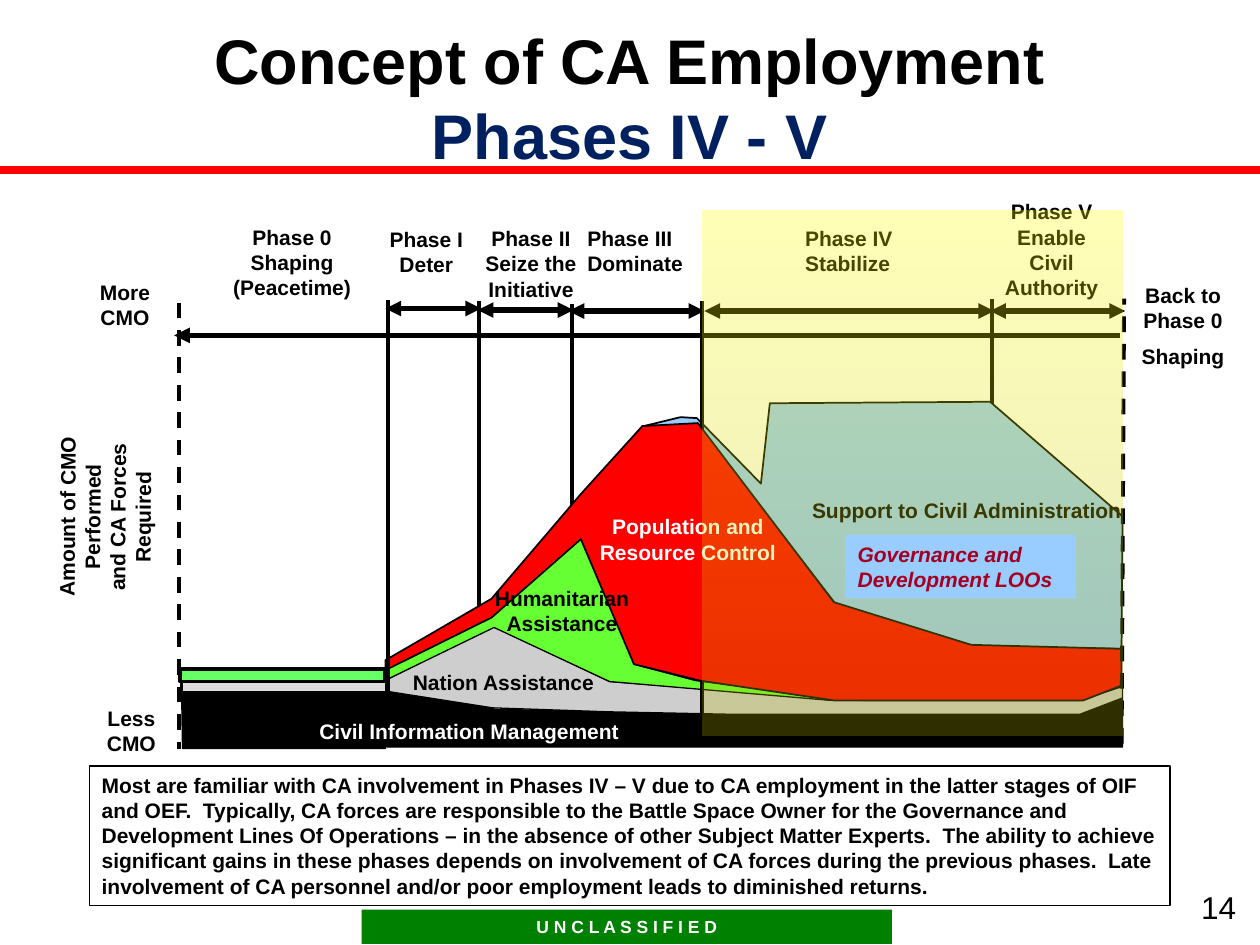
from lxml import etree
from pptx import Presentation
from pptx.dml.color import RGBColor
from pptx.enum.dml import MSO_LINE
from pptx.enum.shapes import MSO_CONNECTOR, MSO_SHAPE
from pptx.enum.text import MSO_ANCHOR, PP_ALIGN
from pptx.oxml.ns import qn
from pptx.util import Cm, Pt

RECT, LINE, DASH = MSO_SHAPE.RECTANGLE, MSO_CONNECTOR.STRAIGHT, MSO_LINE.DASH
LEFT, MID, RIGHT = PP_ALIGN.LEFT, PP_ALIGN.CENTER, PP_ALIGN.RIGHT
TOP, HALF = MSO_ANCHOR.TOP, MSO_ANCHOR.MIDDLE

THEME = {
    "black": "000000", "white": "FFFFFF", "red": "FF0000", "navy": "002060",
    "bar": "008000", "gray": "CECECE", "pale": "DDDDDD", "lime": "66FF33",
    "mint": "66FF66", "sky": "99CCFF", "wine": "A50021",
    "sun": "FFFF00", "olive": "B6B600",
    "title": 36, "page": 18, "body": 12, "small": 10, "font": "Arial",
}


def tone(name):
    return RGBColor.from_string(THEME[name])


def write(box, rows, ink="black", size="body", align=MID, wrap=False,
          anchor=TOP, pad=(0.18, 0.1), gap=0, bold=True, italic=False):
    frame = box.text_frame
    form = {"word_wrap": wrap, "vertical_anchor": anchor,
            "margin_left": Cm(pad[0]), "margin_right": Cm(pad[0]),
            "margin_top": Cm(pad[1]), "margin_bottom": Cm(pad[1])}
    for key, val in form.items():
        setattr(frame, key, val)
    face = {"name": THEME["font"], "size": Pt(THEME[size]),
            "bold": bold, "italic": italic}
    for num, row in enumerate(rows):
        para = frame.add_paragraph() if num else frame.paragraphs[0]
        para.alignment = align
        if num and gap:
            para.space_before = Pt(gap)
        run = para.add_run()
        run.text = row
        for key, val in face.items():
            setattr(run.font, key, val)
        run.font.color.rgb = tone(ink)


def draw(x1, y1, x2, y2, ink="black", width=2.25, ends=(), dash=None):
    line = shapes.add_connector(LINE, Cm(x1), Cm(y1), Cm(x2), Cm(y2))
    line.line.color.rgb = tone(ink)
    line.line.width = Pt(width)
    if dash:
        line.line.dash_style = dash
    pen = line.line._get_or_add_ln()
    for end in ends:
        etree.SubElement(pen, qn(f"a:{end}"), type="triangle")
    etree.SubElement(line._element.spPr, qn("a:effectLst"))


deck = Presentation()
deck.slide_width, deck.slide_height = Cm(25.4), Cm(19.05)
shapes = deck.slides.add_slide(deck.slide_layouts[6]).shapes
WIDE = (0.25, 0.13)

# Rule and title
draw(0, 3.43, 25.4, 3.43, "red", 4.5)
title = shapes.add_textbox(Cm(0.63), Cm(0.36), Cm(24.13), Cm(3.18))
write(title, ["Concept of CA Employment"], size="title", wrap=True,
      anchor=HALF, pad=WIDE)
para = title.text_frame.paragraphs[0]
para.add_line_break()
run = para.add_run()
run.text = "Phases IV - V"
run.font.name, run.font.size, run.font.bold = THEME["font"], Pt(THEME["title"]), True
run.font.color.rgb = tone("navy")

# Phase borders behind the areas
for x, top, low in [(19.99, 6.02, 14.96), (9.66, 6.07, 15.04), (11.53, 6.12, 15.06)]:
    draw(x, low, x, top)

# Stacked areas, with the border of phase IV below the red one
areas = [
    ("black", 0.75, [(7.8, 15.06), (7.82, 13.89), (9.98, 14.3), (12.29, 14.35),
                     (17.45, 14.43), (19.28, 14.4), (21.77, 14.4),
                     (22.63, 14.07), (22.63, 15.06)]),
    ("gray", 0.75, [(7.82, 13.94), (7.82, 13.69), (9.93, 12.62), (12.29, 13.74),
                    (17.4, 14.12), (21.77, 14.12), (22.63, 13.84),
                    (22.63, 14.07), (21.77, 14.4), (14.76, 14.4),
                    (12.27, 14.35), (9.93, 14.27)]),
    ("lime", 0.75, [(7.82, 13.46), (9.96, 12.37), (12.24, 10.39), (12.78, 13.39),
                    (14.02, 13.72), (16.84, 14.07), (16.74, 14.12),
                    (12.29, 13.74), (9.96, 12.65), (7.82, 13.69)]),
    ("sky", 1, [(14.05, 8.43), (15.34, 9.75), (15.52, 8.13), (19.96, 8.1),
                (22.63, 10.41), (22.61, 13.08), (19.58, 13.03), (16.84, 12.17),
                (14.05, 8.56), (12.98, 8.59), (13.72, 8.41)]),
    ("black", 0.75, [(7.77, 15.09), (7.77, 13.82), (3.66, 13.82), (3.68, 15.09)]),
    ("red", 1, [(7.77, 13.31), (9.91, 12.07), (11.71, 9.96), (12.95, 8.59),
                (14.07, 8.53), (16.81, 12.14), (19.58, 13), (22.61, 13.08),
                (22.61, 13.82), (21.84, 14.12), (16.81, 14.12), (14.1, 13.72),
                (12.78, 13.39), (11.71, 10.87), (9.91, 12.45), (7.77, 13.51)]),
]
for ink, width, dots in areas:
    if ink == "red":
        draw(14.16, 15.04, 14.16, 6.07)
    dots = [(Cm(x), Cm(y)) for x, y in dots]
    path = shapes.build_freeform(*dots[0])
    path.add_line_segments(dots[1:], close=True)
    area = path.convert_to_shape()
    area.shadow.inherit = False
    area.fill.solid()
    area.fill.fore_color.rgb = tone(ink)
    area.line.color.rgb = tone("black")
    area.line.width = Pt(width)

# Peacetime bands
for x, y, ink in [(3.66, 13.72, "pale"), (3.63, 13.49, "mint")]:
    band = shapes.add_shape(RECT, Cm(x), Cm(y), Cm(4.14), Cm(0.25))
    band.shadow.inherit = False
    band.fill.solid()
    band.fill.fore_color.rgb = tone(ink)
    band.line.color.rgb = tone("black")
    band.line.width = Pt(2.25)

# Time arrows and outer borders
BOTH = ("headEnd", "tailEnd")
draw(3.51, 6.76, 22.58, 6.76, width=3, ends=BOTH[:1])
for x1, x2, y in [(7.77, 9.7, 6.22), (9.63, 11.56, 6.25), (11.46, 14.2, 6.27),
                  (14.2, 20.04, 6.27), (19.96, 22.68, 6.27)]:
    draw(x1, y, x2, y, width=3, ends=BOTH)
draw(7.82, 15.06, 7.82, 6.05)
draw(3.61, 6.1, 3.61, 15.09, dash=DASH)
draw(22.61, 14.99, 22.66, 6.02, dash=DASH)

# Labels: left, top, width, height, rows, format
labels = [
    (4.34, 4.42, 3.1, 1.73, ["Phase 0", "Shaping", "(Peacetime)"], {}),
    (7.67, 4.47, 1.85, 1.22, ["Phase I", "Deter"], {}),
    (9.6, 4.45, 2.21, 1.73, ["Phase II", "Seize the", "Initiative"], {}),
    (11.66, 4.45, 2.41, 1.65, ["Phase III", "Dominate"], {"align": LEFT}),
    (16.05, 4.45, 2.24, 1.65, ["Phase IV", "Stabilize"], {"align": LEFT}),
    (20.07, 3.91, 2.26, 2.24, ["Phase V", "Enable", "Civil", "Authority"], {}),
    (0.97, 5.54, 3.1, 1.22, ["More", "CMO"], {}),
    (1.09, 14.12, 3.12, 1.22, ["Less", "CMO"], {}),
    (0.25, 9.3, 3.73, 2.24,
     ["Amount of CMO", "Performed", "and CA Forces", "Required"], {}),
    (8.13, 13.39, 4.04, 0.69, ["Nation Assistance"], {}),
    (16.15, 9.93, 6.68, 0.69, ["Support to Civil Administration"], {}),
    (6.22, 14.38, 6.48, 0.69, ["Civil Information Management"], {"ink": "white"}),
    (22.3, 5.59, 3.1, 1.98, ["Back to Phase 0", "Shaping"],
     {"wrap": True, "gap": 6}),
    (9.78, 11.71, 3.1, 1.22, ["Humanitarian", "Assistance"], {}),
    (11.84, 10.26, 4.06, 1.22, ["Population and", "Resource Control"],
     {"ink": "white"}),
]
for x, y, w, h, rows, form in labels:
    box = shapes.add_textbox(Cm(x), Cm(y), Cm(w), Cm(h))
    write(box, rows, **form)
    if rows[0].startswith("Amount"):
        box.rotation = 270.4

# Veil over phases IV and V
veil = shapes.add_shape(RECT, Cm(14.17), Cm(4.24), Cm(8.46), Cm(10.59))
veil.shadow.inherit = False
veil.line.fill.background()
veil.fill.gradient()
veil.fill.gradient_angle = 270
for stop, ink in zip(veil.fill.gradient_stops, ["sun", "olive"]):
    stop.color.rgb = tone(ink)
for node, part in zip(veil._element.spPr.iter(qn("a:srgbClr")), [29, 26]):
    for old in list(node):
        node.remove(old)
    etree.SubElement(node, qn("a:alpha"), val=str(part * 1000))

# Panels: left, top, width, height, fill, edge, text, format
note = (
    "Most are familiar with CA involvement in Phases IV – V due to CA employment "
    "in the latter stages of OIF and OEF.  Typically, CA forces are responsible to "
    "the Battle Space Owner for the Governance and Development Lines Of Operations "
    "– in the absence of other Subject Matter Experts.  The ability to achieve "
    "significant gains in these phases depends on involvement of CA forces during "
    "the previous phases.  Late involvement of CA personnel and/or poor employment "
    "leads to diminished returns.")
panels = [
    (1.8, 15.44, 21.79, 2.82, None, "black", note, {"align": LEFT}),
    (17.04, 10.79, 4.65, 1.27, "sky", None, "Governance and Development LOOs",
     {"align": LEFT, "ink": "wine", "italic": True}),
    (7.29, 18.34, 10.69, 0.69, "bar", None, "U N C L A S S I F I E D",
     {"ink": "white", "size": "small"}),
]
for x, y, w, h, fill, edge, text, form in panels:
    box = shapes.add_shape(RECT, Cm(x), Cm(y), Cm(w), Cm(h))
    box.shadow.inherit = False
    for part, ink in [(box.fill, fill), (box.line.fill, edge)]:
        if ink:
            part.solid()
            part.fore_color.rgb = tone(ink)
        else:
            part.background()
    box.line.width = Pt(0.75)
    write(box, [text], wrap=True, pad=WIDE, **form)

# Page number
page = shapes.add_textbox(Cm(19.89), Cm(17.78), Cm(5.28), Cm(1.27))
write(page, ["14"], size="page", align=RIGHT, wrap=True, pad=WIDE, bold=False)

deck.save("out.pptx")
